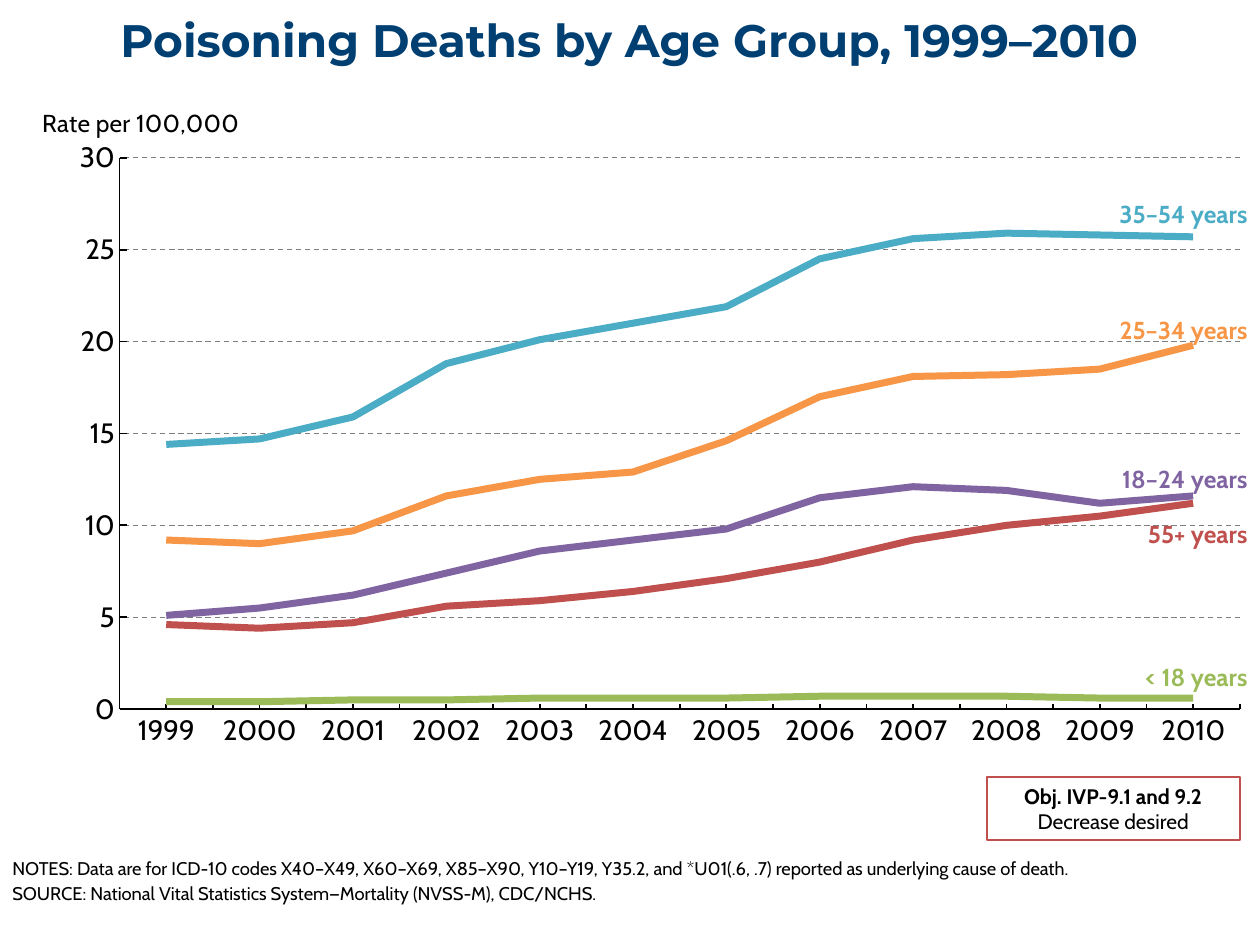
"""Build the slide on poisoning deaths by age group."""
from lxml.etree import SubElement
from pptx import Presentation
from pptx.chart.data import CategoryChartData
from pptx.dml.color import RGBColor
from pptx.enum.chart import XL_CHART_TYPE, XL_TICK_MARK
from pptx.enum.dml import MSO_LINE
from pptx.enum.shapes import MSO_SHAPE
from pptx.enum.text import MSO_ANCHOR, PP_ALIGN
from pptx.oxml import parse_xml
from pptx.oxml.ns import nsdecls, qn
from pptx.util import Pt


def style(font, tint, **form):
    font.color.rgb = RGBColor.from_string(tint)
    for key, val in form.items():
        setattr(font, key, val)


def write(shape, lines, align, anchor, gap=0):
    frame = shape.text_frame
    frame.word_wrap = True
    frame.vertical_anchor = anchor
    for num, (text, tint, form) in enumerate(lines):
        para = frame.add_paragraph() if num else frame.paragraphs[0]
        para.alignment = align
        if num:
            para.space_before = Pt(gap)
        run = para.add_run()
        run.text = text
        style(run.font, tint, **form)


deck = Presentation()
deck.slide_width, deck.slide_height = Pt(720), Pt(540)
slide = deck.slides.add_slide(deck.slide_layouts[6])
shapes = slide.shapes

groups = [
    ("Series 1", "9BBB59", [0.4, 0.4, 0.5, 0.5, 0.6, 0.6, 0.6, 0.7, 0.7, 0.7, 0.6, 0.6]),
    ("Series 2", "8064A2", [5.1, 5.5, 6.2, 7.4, 8.6, 9.2, 9.8, 11.5, 12.1, 11.9, 11.2, 11.6]),
    ("Series 3", "F79646", [9.2, 9, 9.7, 11.6, 12.5, 12.9, 14.6, 17, 18.1, 18.2, 18.5, 19.8]),
    ("Series 4", "4BACC6", [14.4, 14.7, 15.9, 18.8, 20.1, 21, 21.9, 24.5, 25.6, 25.9, 25.8, 25.7]),
    ("Series 5", "C0504D", [4.6, 4.4, 4.7, 5.6, 5.9, 6.4, 7.1, 8, 9.2, 10, 10.5, 11.2]),
]
data = CategoryChartData()
data.categories = [str(year) for year in range(1999, 2011)]
for name, tint, rates in groups:
    data.add_series(name, rates)
chart = shapes.add_chart(
    XL_CHART_TYPE.LINE, Pt(0), Pt(54), Pt(719.3), Pt(385.2), data).chart
chart.has_legend = chart.has_title = False
style(chart.font, "000000", name="Calibri", size=Pt(18))
for series, (name, tint, rates) in zip(chart.plots[0].series, groups):
    series.smooth = False
    series.format.line.color.rgb = RGBColor.from_string(tint)
    series.format.line.width = Pt(4)

years, scale = chart.category_axis, chart.value_axis
for axis in (years, scale):
    style(axis.tick_labels.font, "000000", name="Cabin", size=Pt(16))
    axis.format.line.color.rgb = RGBColor.from_string("000000")
    axis.format.line.width = Pt(1)
years.major_tick_mark = XL_TICK_MARK.NONE
years.minor_tick_mark = XL_TICK_MARK.INSIDE
form = {"minimum_scale": 0, "maximum_scale": 30, "major_unit": 5,
        "major_tick_mark": XL_TICK_MARK.INSIDE, "has_major_gridlines": True}
for key, val in form.items():
    setattr(scale, key, val)
scale.tick_labels.number_format = "0"
scale.tick_labels.number_format_is_linked = False
grid = scale.major_gridlines.format.line
grid.color.rgb = RGBColor.from_string("7F7F7F")
grid.width, grid.dash_style = Pt(0.75), MSO_LINE.DASH
title = scale.axis_title
title.text_frame.text = "Rate per 100,000"
style(title.text_frame.paragraphs[0].runs[0].font, "000000",
      name="Cabin", size=Pt(14), bold=False)
body = title.text_frame._txBody.find(qn("a:bodyPr"))
body.set("rot", "0")
body.set("vert", "horz")

area = chart._chartSpace.chart.plotArea
spots = [
    (area, {"layoutTarget": "inner", "xMode": "edge", "yMode": "edge",
            "x": 0.095, "y": 0.094, "w": 0.89, "h": 0.818}),
    (title._element, {"xMode": "edge", "yMode": "edge", "x": 0.03, "y": 0.01}),
]
for owner, rule in spots:
    for old in owner.findall(qn("c:layout")):
        owner.remove(old)
    layout = parse_xml(f"<c:layout {nsdecls('c')}/>")
    manual = SubElement(layout, qn("c:manualLayout"))
    for key, val in rule.items():
        SubElement(manual, qn(f"c:{key}")).set("val", str(val))
    owner.insert(0 if owner is area else 1, layout)

head = {"name": "Montserrat", "size": Pt(26), "bold": True}
label = {"name": "Cabin", "size": Pt(14), "bold": True}
note = {"name": "Cabin", "size": Pt(10.5)}
goal = {"name": "Cabin", "size": Pt(12)}

box = shapes.add_textbox(Pt(0), Pt(0), Pt(720), Pt(44.6))
write(box, [("Poisoning Deaths by Age Group, 1999–2010", "003F72", head)],
      PP_ALIGN.CENTER, MSO_ANCHOR.MIDDLE)

tags = [
    ("55+ years", "C0504D", 293.8, 22.3),
    ("< 18 years", "9BBB59", 373.7, 26.6),
    ("35–54 years", "4BACC6", 108, 28.1),
    ("25–34 years", "F79646", 174.2, 28.8),
    ("18–24 years", "8064A2", 257.8, 31),
]
for text, tint, top, high in tags:
    box = shapes.add_textbox(Pt(560), Pt(top), Pt(160), Pt(high))
    write(box, [(text, tint, label)], PP_ALIGN.RIGHT, MSO_ANCHOR.MIDDLE)

box = shapes.add_textbox(Pt(0), Pt(486), Pt(635.8), Pt(54))
write(box, [
    ("NOTES: Data are for ICD-10 codes X40–X49, X60–X69, X85–X90, Y10–Y19, Y35.2, "
     "and *U01(.6, .7) reported as underlying cause of death.", "000000", note),
    ("SOURCE: National Vital Statistics System—Mortality (NVSS-M), CDC/NCHS.",
     "000000", note),
], PP_ALIGN.LEFT, MSO_ANCHOR.TOP, 2)

box = shapes.add_shape(MSO_SHAPE.RECTANGLE, Pt(563.8), Pt(444.2), Pt(144.7), Pt(36))
box.shadow.inherit = False
box.fill.background()
box.line.color.rgb = RGBColor.from_string("C0504D")
box.line.width = Pt(1.25)
write(box, [("Obj. IVP-9.1 and 9.2", "000000", goal | {"bold": True}),
            ("Decrease desired", "000000", goal)],
      PP_ALIGN.CENTER, MSO_ANCHOR.TOP)

deck.save("out.pptx")
